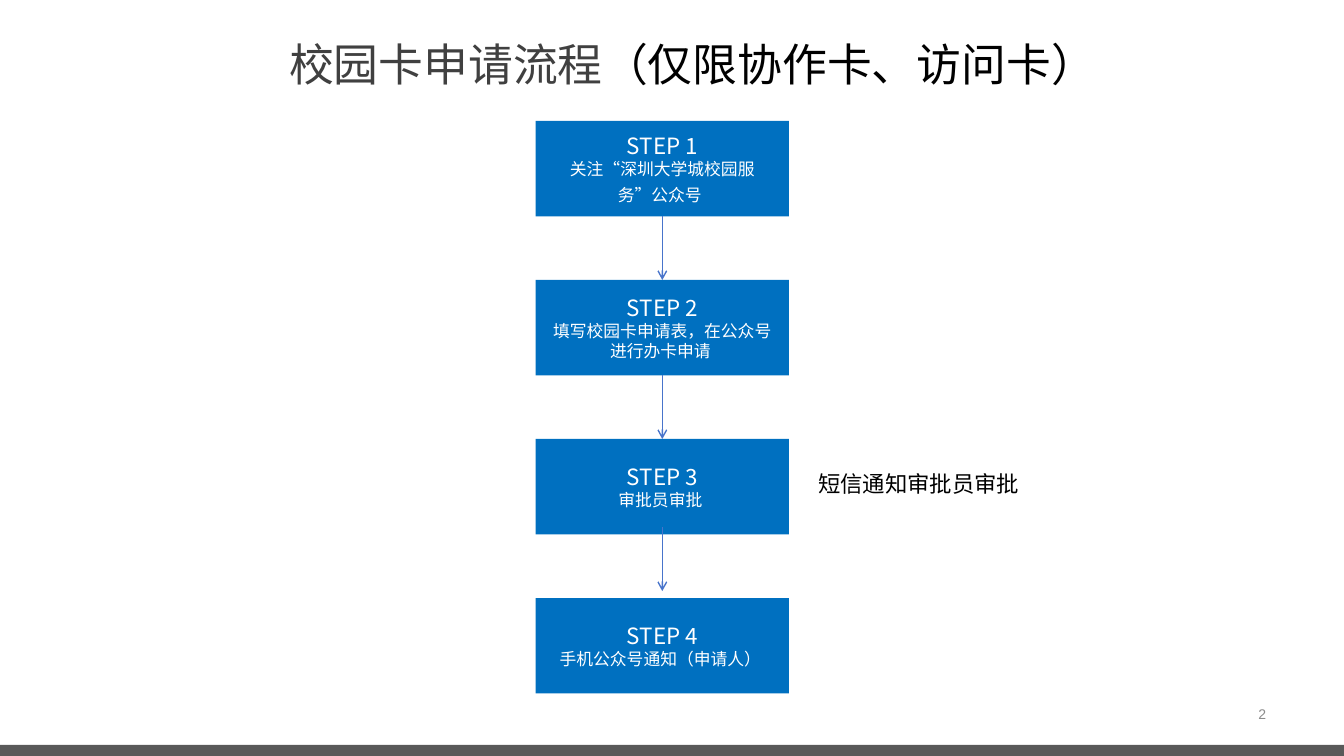
from lxml import etree
from pptx import Presentation
from pptx import util as u
from pptx.dml.color import RGBColor
from pptx.enum import shapes, text
from pptx.oxml.ns import qn

# Content
TITLE = [("校园卡申请流程", "title"), ("（仅限协作卡、访问卡）", "ink")]
STEPS = [  # name, detail, size of the closing space
    ("STEP 1", "关注“深圳大学城校园服务”公众号", "step"),
    ("STEP 2", "填写校园卡申请表，在公众号进行办卡申请", "detail"),
    ("STEP 3", "审批员审批", "detail"),
    ("STEP 4", "手机公众号通知（申请人）", "detail"),
]
ARROW_LIFTS = [0, 0, 5]  # how far each arrow sits above its gap
SIDE_NOTE = "短信通知审批员审批"
PAGE_NUMBER = "2"

THEME = {
    "colours": {"title": "404040", "ink": "000000", "box": "0070C0", "white": "FFFFFF",
                "arrow": "4874CB", "footer": "595959", "number": "8C8C8C"},
    "sizes": {"title": 32, "step": 16, "detail": 12, "number": 10},
    "cjk": "Noto Sans CJK JP",
    "latin": "Arial",
}

# Layout, in points
WIDTH, HEIGHT = 960, 540
BOX_LEFT, BOX_TOP, BOX_WIDTH, BOX_HEIGHT, BOX_PITCH = 382.6, 86.4, 181, 68.2, 113.6
FOOTER_HEIGHT = 8

presentation = Presentation()
presentation.slide_width, presentation.slide_height = u.Pt(WIDTH), u.Pt(HEIGHT)
slide = presentation.slides.add_slide(presentation.slide_layouts[6])


def colour(name):
    return RGBColor.from_string(THEME["colours"][name])


def add_run(paragraph, words, size, ink, latin=THEME["cjk"]):
    run = paragraph.add_run()
    run.text = words
    run.font.color.rgb = colour(ink)
    settings = {"size": u.Pt(THEME["sizes"][size]), "name": latin}
    for attribute, value in settings.items():
        setattr(run.font, attribute, value)
    east_asian = etree.Element(qn("a:ea"), typeface=THEME["cjk"])
    run.font._element.find(qn("a:latin")).addnext(east_asian)


def add_text_box(left, top, width, height, align=text.PP_ALIGN.LEFT,
                 anchor=text.MSO_ANCHOR.TOP):
    frame = slide.shapes.add_textbox(*map(u.Pt, (left, top, width, height))).text_frame
    for attribute, value in {"word_wrap": True, "vertical_anchor": anchor}.items():
        setattr(frame, attribute, value)
    frame.paragraphs[0].alignment = align
    return frame.paragraphs[0]


def add_rectangle(left, top, width, height, fill):
    shape = slide.shapes.add_shape(shapes.MSO_SHAPE.RECTANGLE,
                                   *map(u.Pt, (left, top, width, height)))
    shape.shadow.inherit = False
    shape.fill.solid()
    shape.fill.fore_color.rgb = colour(fill)
    shape.line.fill.background()
    return shape


# Title, footer band and page number
title = add_text_box(199.4, 23, 778.4, 46)
for words, ink in TITLE:
    add_run(title, words, "title", ink)
add_rectangle(0, HEIGHT - FOOTER_HEIGHT, WIDTH, FOOTER_HEIGHT, "footer")
number = add_text_box(699, 497.5, 212.4, 25.2, text.PP_ALIGN.RIGHT, text.MSO_ANCHOR.MIDDLE)
add_run(number, PAGE_NUMBER, "number", "number", THEME["latin"])

# Step boxes
boxes = []
for index, (name, detail, space_size) in enumerate(STEPS):
    box = add_rectangle(BOX_LEFT, BOX_TOP + index * BOX_PITCH, BOX_WIDTH, BOX_HEIGHT, "box")
    frame = box.text_frame
    for attribute, value in {"word_wrap": True,
                             "vertical_anchor": text.MSO_ANCHOR.MIDDLE}.items():
        setattr(frame, attribute, value)
    heading, body = frame.paragraphs[0], frame.add_paragraph()
    heading.alignment = body.alignment = text.PP_ALIGN.CENTER
    add_run(heading, name, "step", "white")
    add_run(body, detail, "detail", "white")
    add_run(body, " ", space_size, "white")
    boxes.append(box)

# Note beside step 3
add_run(add_text_box(577.4, 332, 255, 34), SIDE_NOTE, "step", "ink", THEME["latin"])

# Arrows between steps, joined where they meet the box sides
for upper, lower, lift in zip(boxes, boxes[1:], ARROW_LIFTS):
    middle = upper.left + upper.width // 2
    arrow = slide.shapes.add_connector(
        shapes.MSO_CONNECTOR.STRAIGHT, middle, upper.top + upper.height - u.Pt(lift),
        middle, lower.top - u.Pt(lift))
    if not lift:
        arrow.begin_connect(upper, 2)
        arrow.end_connect(lower, 0)
    arrow.line.color.rgb = colour("arrow")
    arrow.line.width = u.Pt(1)
    etree.SubElement(arrow.line._get_or_add_ln(), qn("a:tailEnd"), type="arrow")
    etree.SubElement(arrow._element.spPr, qn("a:effectLst"))

presentation.save("out.pptx")
